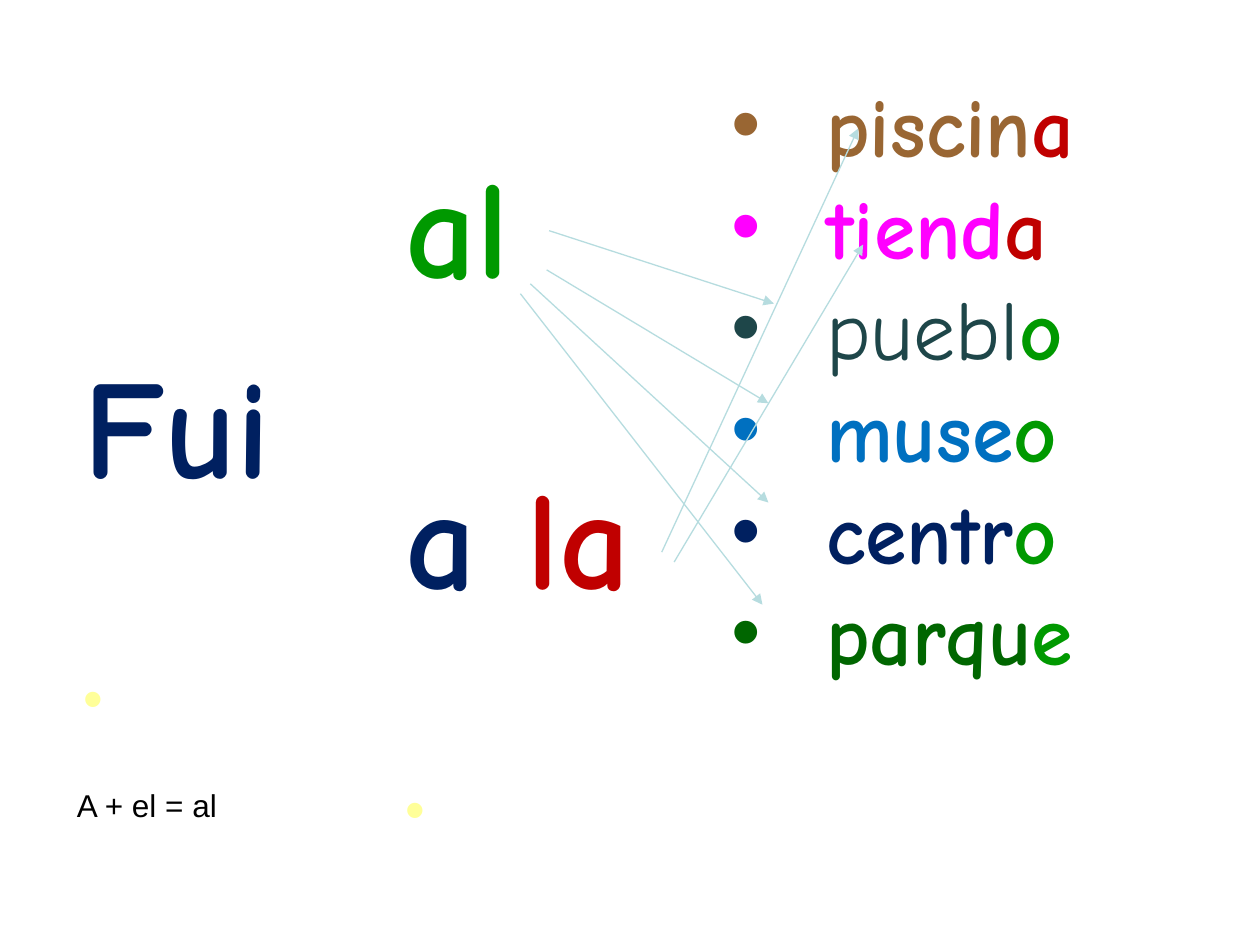
from lxml.etree import SubElement
from pptx import Presentation
from pptx.dml.color import RGBColor
from pptx.enum.shapes import MSO_CONNECTOR as Link
from pptx.enum.text import MSO_ANCHOR as Anchor, MSO_AUTO_SIZE as Fit
from pptx.oxml.ns import qn
from pptx.util import Cm, Pt

BLACK = RGBColor(0, 0, 0)
NAVY = RGBColor(0x00, 0x20, 0x60)
GREEN = RGBColor(0x00, 0x99, 0x00)
RED = RGBColor(0xC0, 0x00, 0x00)
BROWN = RGBColor(0x99, 0x66, 0x33)
PINK = RGBColor(0xFF, 0x00, 0xFF)
SLATE = RGBColor(0x1E, 0x46, 0x49)
BLUE = RGBColor(0x00, 0x70, 0xC0)
FOREST = RGBColor(0x00, 0x66, 0x00)
YELLOW = RGBColor(0xFF, 0xFF, 0x99)
PALE = RGBColor(0xB6, 0xDC, 0xDF)
FONT = "Comic Neue"

# Content: stem, stem colour, bold stem, ending, ending colour
PLACES = [
    ("piscin", BROWN, True, "a", RED),
    ("tiend", PINK, True, "a", RED),
    ("puebl", SLATE, False, "o", GREEN),
    ("muse", BLUE, True, "o", GREEN),
    ("centr", NAVY, True, "o", GREEN),
    ("parqu", FOREST, True, "e", GREEN),
]
VERB = [[("Fui", NAVY)]]
FORMS = [[("al", GREEN)], [("a ", NAVY), ("la", RED)]]
NOTE = "A + el = al"

# Boxes (left, top, width, height) and arrows (from x, y, to x, y) in cm
LIST_BOX = (14.5, 1.75, 8.99, 15.01)
VERB_BOX = (1.42, 3.53, 6.4, 12.19)
FORM_BOX = (7.92, 3.33, 7.19, 12.19)
NOTE_BOX = (1.3, 15.72, 8, 1.02)
ARROWS = [
    (11.07, 4.65, 15.6, 6.12),
    (11.02, 5.44, 15.49, 8.13),
    (10.69, 5.72, 15.49, 10.13),
    (10.49, 5.92, 15.37, 12.19),
    (13.34, 11.13, 17.3, 2.59),
    (13.59, 11.33, 17.4, 4.93),
]


def place(shape, box):
    shape.left, shape.top, shape.width, shape.height = map(Cm, box)
    frame = shape.text_frame
    frame.word_wrap = True
    frame.auto_size = Fit.NONE
    frame.vertical_anchor = Anchor.TOP
    return frame


def add_run(para, text, size, color, bold=True, name=FONT):
    run = para.add_run()
    run.text = text
    font = run.font
    font.name, font.size, font.bold = name, Pt(size), bold
    font.color.rgb = color


def add_para(frame, gap):
    first = frame.paragraphs[0]
    para = frame.add_paragraph() if first.runs else first
    para.line_spacing = 0.8
    para.space_before = Pt(gap)
    return para


def set_bullet(para, indent=0, color=None, scale=100):
    props = para._p.get_or_add_pPr()
    props.set("marL", str(Cm(indent)))
    props.set("indent", str(-Cm(indent)))
    if color is None:
        SubElement(props, qn("a:buNone"))
        return
    tint = SubElement(props, qn("a:buClr"))
    SubElement(tint, qn("a:srgbClr"), val=str(color))
    SubElement(props, qn("a:buSzPct"), val=str(scale * 1000))
    SubElement(props, qn("a:buFont"), typeface="Arial")
    SubElement(props, qn("a:buChar"), char="•")


def fill_words(frame, lines):
    """Large words, closed by a small yellow bullet."""
    for parts in lines:
        para = add_para(frame, 101)
        set_bullet(para)
        for text, color in parts:
            add_run(para, text, 80, color)
    para = add_para(frame, 93)
    set_bullet(para, 0.95, YELLOW, 67)
    add_run(para, " ", 48, BLACK, False)


def add_arrow(slide, ends):
    line = slide.shapes.add_connector(Link.STRAIGHT, *map(Cm, ends))
    line.line.color.rgb = PALE
    line.line.width = Pt(0.75)
    SubElement(line.line._get_or_add_ln(), qn("a:tailEnd"), type="triangle")
    SubElement(line._element.spPr, qn("a:effectLst"))


def main():
    deck = Presentation()
    deck.slide_width, deck.slide_height = Cm(25.4), Cm(19.05)
    slide = deck.slides.add_slide(deck.slide_layouts[3])
    title, left, right = slide.placeholders
    title._element.getparent().remove(title._element)

    # Places to go
    frame = place(right, LIST_BOX)
    for stem, color, bold, end, tint in PLACES:
        para = add_para(frame, 12)
        set_bullet(para, 1.9, color)
        add_run(para, stem, 48, color, bold)
        add_run(para, end, 48, tint)

    # Verb and the two forms
    frame = place(left, VERB_BOX)
    frame.margin_top = Cm(3.95)
    fill_words(frame, VERB)
    fill_words(place(slide.shapes.add_textbox(0, 0, 0, 0), FORM_BOX), FORMS)

    # Rule
    frame = place(slide.shapes.add_textbox(0, 0, 0, 0), NOTE_BOX)
    frame.auto_size = Fit.SHAPE_TO_FIT_TEXT
    add_run(frame.paragraphs[0], NOTE, 18, BLACK, False, "Arial")

    # Arrows from forms to places
    for ends in ARROWS:
        add_arrow(slide, ends)

    deck.save("out.pptx")


if __name__ == "__main__":
    main()
